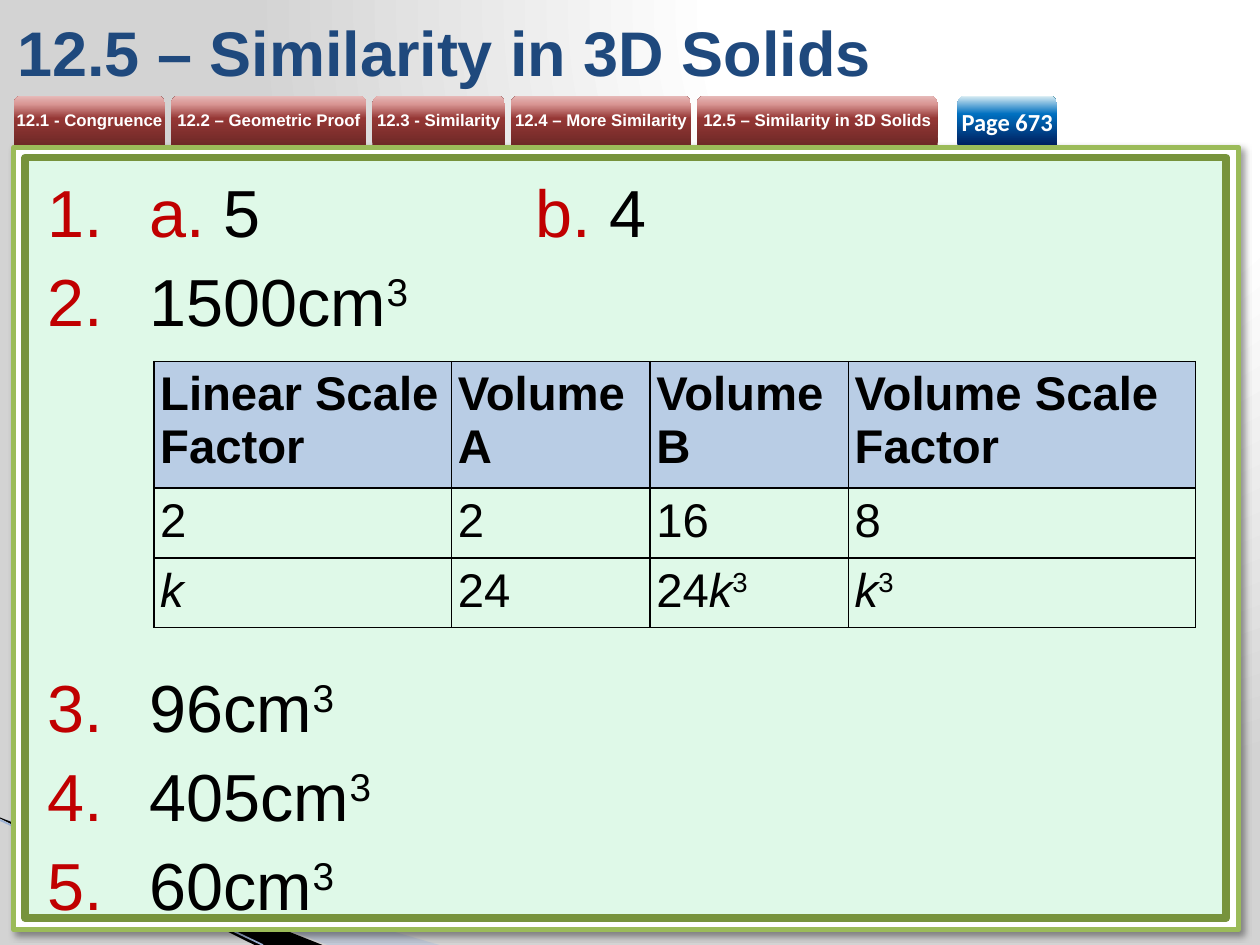
from lxml.etree import SubElement
from pptx import Presentation
from pptx.dml.color import RGBColor
from pptx.enum.shapes import MSO_CONNECTOR, MSO_SHAPE
from pptx.enum.text import MSO_ANCHOR, PP_ALIGN
from pptx.oxml import parse_xml
from pptx.oxml.ns import nsdecls, qn
from pptx.util import Cm, Pt

HUES = {
    "white": "FFFFFF", "black": "000000", "grey": "D3D3D3", "navy": "1F497D",
    "mint": "DFF9E8", "lime": "9BBB59", "olive": "77933C", "red": "C00000",
    "head": "B9CDE5", "haze": "A7B9DB", "edge": "9EB3D6",
}
WINE = [(0, "6F2927"), (54, "953735"), (83, "D99694"), (100, "E6B9B8")]
BLUE = [(0, "002060"), (63, "0070C0"), (100, "DBEEF4")]
GLOW = [(0, HUES["white"]), (40, HUES["white"]), (100, HUES["grey"])]
TABS = [
    ("12.1 - Congruence", 3.05), ("12.2 – Geometric Proof", 3.94),
    ("12.3 - Similarity", 2.67), ("12.4 – More Similarity", 3.63),
    ("12.5 – Similarity in 3D Solids", 4.85),
]
CUBE = ("3", {"base": 30})
KAY = ("k", {"italic": True})
RED = {"hue": "red"}
FIRST = [[("a. ", RED), ("5 \t", {}), ("b. ", RED), ("4", {})],
         [("1500cm", {}), CUBE]]
LAST = [[(size, {}), CUBE] for size in ("96cm", "405cm", "60cm")]
HEADS = ["Linear Scale Factor", "Volume A", "Volume B", "Volume Scale Factor"]
ROWS = [
    [[(name, {"bold": True})] for name in HEADS],
    [[(value, {})] for value in ("2", "2", "16", "8")],
    [[KAY], [("24", {})], [("24", {}), KAY, CUBE], [KAY, CUBE]],
]


def tint(name):
    """Return the named colour."""
    return RGBColor.from_string(HUES[name])


def write(para, text, size=38, hue="black", face="Arial", bold=False, italic=False, base=0):
    """Add one formatted run to a paragraph."""
    run = para.add_run()
    run.text = text
    font = run.font
    font.size, font.name, font.bold, font.italic = Pt(size), face, bold, italic
    font.color.rgb = tint(hue)
    if base:
        font._element.set("baseline", str(base * 1000))


def blend(fill, stops, path=None):
    """Give a fill a rising gradient, or a round one centred on path."""
    fill.gradient()
    fill.gradient_angle = 90
    grad = fill._fill._gradFill
    ramp = grad.find(qn("a:gsLst"))
    for old in list(ramp):
        ramp.remove(old)
    for pos, code in stops:
        stop = SubElement(ramp, qn("a:gs"), pos=str(pos * 1000))
        SubElement(stop, qn("a:srgbClr"), val=code)
    if path:
        grad.remove(grad.find(qn("a:lin")))
        round_ = SubElement(grad, qn("a:path"), path="circle")
        SubElement(round_, qn("a:fillToRect"), **path)


def panel(slide, box, fill, line, width):
    """Draw a framed rectangle in the box."""
    shape = slide.shapes.add_shape(MSO_SHAPE.RECTANGLE, *map(Cm, box))
    shape.shadow.inherit = False
    shape.fill.solid()
    shape.fill.fore_color.rgb = tint(fill)
    shape.line.color.rgb = tint(line)
    shape.line.width = Pt(width)
    return shape


def frame(slide, box):
    """Draw the shadowed outer panel and the mint panel inside it."""
    x, y, w, h = box
    outer = panel(slide, box, "white", "lime", 3)
    cast = outer._element.spPr.find(qn("a:effectLst"))
    shade = SubElement(cast, qn("a:outerShdw"), blurRad=str(Pt(4)), dist=str(Pt(3)),
                       dir="2700000", algn="tl", rotWithShape="0")
    black = SubElement(shade, qn("a:srgbClr"), val=HUES["black"])
    SubElement(black, qn("a:alpha"), val="40000")
    panel(slide, (x + 0.23, y + 0.21, w - 0.48, h - 0.44), "mint", "olive", 4.33)


def wedge(slide, points, hue, alpha=100):
    """Draw a filled outline through the points."""
    spots = [(Cm(x), Cm(y)) for x, y in points]
    build = slide.shapes.build_freeform(*spots[0])
    build.add_line_segments(spots[1:])
    shape = build.convert_to_shape()
    shape.shadow.inherit = False
    shape.fill.solid()
    shape.fill.fore_color.rgb = tint(hue)
    shape.line.fill.background()
    code = shape._element.spPr.find(".//" + qn("a:srgbClr"))
    SubElement(code, qn("a:alpha"), val=str(alpha * 1000))


def corner(slide, box):
    """Draw the slanted stripes at the lower left."""
    x, y, w, h = box
    low = y + h
    wedge(slide, [(x, y), (x + w, low), (x + 6.6, low), (x, y)], "haze", 40)
    wedge(slide, [(x, y), (x + 6.5, low), (x + 5.13, low), (x, y + 0.02)], "black")
    line = slide.shapes.add_connector(
        MSO_CONNECTOR.STRAIGHT, Cm(x), Cm(y + 0.05), Cm(x + 5.3), Cm(low))
    line.line.color.rgb = tint("edge")
    line.line.width = Pt(0.95)
    SubElement(line._element.spPr, qn("a:effectLst"))


def tab(slide, box, text, stops, lead=None, **style):
    """Draw one round-topped tab with its label."""
    shape = slide.shapes.add_shape(MSO_SHAPE.ROUND_2_SAME_RECTANGLE, *map(Cm, box))
    shape.shadow.inherit = False
    shape.line.fill.background()
    blend(shape.fill, stops)
    body = shape.text_frame
    body.margin_left = body.margin_right = body.margin_top = body.margin_bottom = 0
    body.vertical_anchor = MSO_ANCHOR.MIDDLE
    para = body.paragraphs[0]
    para.alignment = PP_ALIGN.CENTER
    para.line_spacing = lead
    write(para, text, hue="white", bold=True, **style)


def strip(slide, box):
    """Draw the row of section tabs and the page tab."""
    x, y, w, h = box
    left = x
    for text, wide in TABS:
        tab(slide, (left, y, wide, h), text, WINE, Pt(10), size=9.6)
        left += wide + 0.12
    tab(slide, (x + w - 2.01, y, 2.01, h), "Page 673", BLUE, size=14, face="Calibri")


def title(slide, box):
    """Write the slide title."""
    body = slide.shapes.add_textbox(*map(Cm, box)).text_frame
    body.word_wrap = True
    body.vertical_anchor = MSO_ANCHOR.MIDDLE
    write(body.paragraphs[0], "12.5 – Similarity in 3D Solids", size=36, hue="navy", bold=True)


def answers(slide, box, items, start):
    """Write numbered answers, counting from start."""
    body = slide.shapes.add_textbox(*map(Cm, box)).text_frame
    body.word_wrap = True
    for spot, runs in enumerate(items):
        para = body.add_paragraph() if spot else body.paragraphs[0]
        para.space_after = Pt(5)
        props = para._p.get_or_add_pPr()
        props.set("marL", str(Cm(2.06)))
        props.set("indent", str(-Cm(2.06)))
        SubElement(SubElement(props, qn("a:buClr")), qn("a:srgbClr"), val=HUES["red"])
        SubElement(props, qn("a:buFont"), typeface="Arial")
        SubElement(props, qn("a:buAutoNum"), type="arabicPeriod", startAt=str(start))
        stops = SubElement(props, qn("a:tabLst"))
        SubElement(stops, qn("a:tab"), pos=str(Cm(9.83)), algn="l")
        for text, style in runs:
            write(para, text, **style)


def border(cell):
    """Rule all four sides of a cell."""
    props = cell._tc.get_or_add_tcPr()
    for spot, side in enumerate(("lnL", "lnR", "lnT", "lnB")):
        props.insert(spot, parse_xml(
            f'<a:{side} {nsdecls("a")} w="{Pt(1)}"><a:solidFill>'
            f'<a:srgbClr val="{HUES["black"]}"/></a:solidFill></a:{side}>'))


def grid(slide, box):
    """Build the table of scale factors and volumes."""
    table = slide.shapes.add_table(len(ROWS), len(HEADS), *map(Cm, box)).table
    table.first_row = table.horz_banding = False
    for col, wide in zip(table.columns, (6, 4, 4, 7)):
        col.width = Cm(box[2] * wide / 21)
    for row, high, data in zip(table.rows, (2.54, 1.4, 1.4), ROWS):
        row.height = Cm(high)
        for cell, runs in zip(row.cells, data):
            cell.margin_left = cell.margin_right = Cm(0.13)
            cell.margin_top = cell.margin_bottom = Cm(0.13)
            if data is ROWS[0]:
                cell.fill.solid()
                cell.fill.fore_color.rgb = tint("head")
            else:
                cell.fill.background()
            border(cell)
            for text, style in runs:
                write(cell.text_frame.paragraphs[0], text, size=27, **style)


def main():
    """Build the slide and save it."""
    deck = Presentation()
    deck.slide_width, deck.slide_height = Cm(25.4), Cm(19.05)
    slide = deck.slides.add_slide(deck.slide_layouts[6])
    blend(slide.background.fill, GLOW, {"l": "65000", "b": "98000"})
    corner(slide, (0, 16.48, 8.86, 2.57))
    frame(slide, (0.28, 2.97, 24.69, 15.77))
    strip(slide, (0.28, 1.93, 21.03, 0.99))
    title(slide, (0.1, 0.13, 21.41, 1.8))
    answers(slide, (0.71, 3.33, 23.8, 3.8), FIRST, 1)
    answers(slide, (0.71, 13.31, 23.8, 5.4), LAST, 3)
    grid(slide, (3.1, 7.29, 21, 5.34))
    deck.save("out.pptx")


if __name__ == "__main__":
    main()
